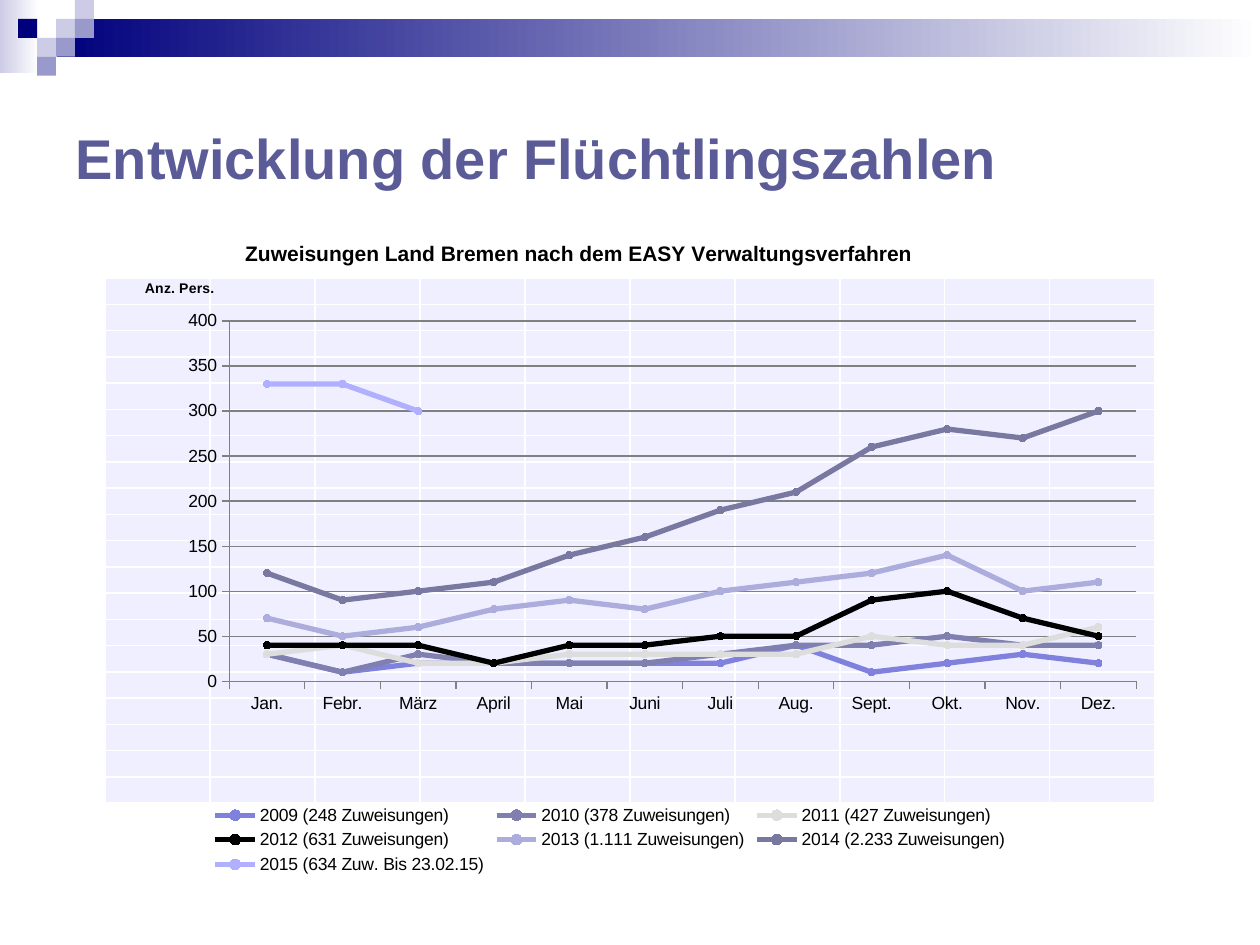
from lxml import etree
from pptx import Presentation
from pptx.chart.data import CategoryChartData
from pptx.dml.color import RGBColor
from pptx.enum import chart as ch, shapes, text
from pptx.oxml import ns, parse_xml
from pptx.util import Pt

NAVY = RGBColor(0x00, 0x00, 0x7D)
LAVENDER = RGBColor(0xCC, 0xCC, 0xE6)
PERIWINKLE = RGBColor(0x99, 0x99, 0xCC)
WHITE = RGBColor(0xFF, 0xFF, 0xFF)
BLACK = RGBColor(0x00, 0x00, 0x00)
TITLE_COLOR = RGBColor(0x5B, 0x5B, 0x98)
CELL_COLOR = RGBColor(0xEF, 0xEF, 0xFF)
AXIS_COLOR = RGBColor(0x80, 0x80, 0x80)

TITLE = "Entwicklung der Flüchtlingszahlen"
CHART_TITLE = "Zuweisungen Land Bremen nach dem EASY Verwaltungsverfahren"
AXIS_TITLE = "Anz. Pers."
MONTHS = ["Jan.", "Febr.", "März", "April", "Mai", "Juni",
          "Juli", "Aug.", "Sept.", "Okt.", "Nov.", "Dez."]
YEARS = [
    ("2009 (248 Zuweisungen)", RGBColor(0x80, 0x80, 0xDD),
     [30, 10, 20, 20, 20, 20, 20, 40, 10, 20, 30, 20]),
    ("2010 (378 Zuweisungen)", RGBColor(0x80, 0x80, 0xB0),
     [30, 10, 30, 20, 20, 20, 30, 40, 40, 50, 40, 40]),
    ("2011 (427 Zuweisungen)", RGBColor(0xDD, 0xDD, 0xDD),
     [30, 40, 20, 20, 30, 30, 30, 30, 50, 40, 40, 60]),
    ("2012 (631 Zuweisungen)", BLACK,
     [40, 40, 40, 20, 40, 40, 50, 50, 90, 100, 70, 50]),
    ("2013 (1.111 Zuweisungen)", RGBColor(0xAD, 0xAD, 0xDD),
     [70, 50, 60, 80, 90, 80, 100, 110, 120, 140, 100, 110]),
    ("2014 (2.233 Zuweisungen)", RGBColor(0x78, 0x78, 0xA0),
     [120, 90, 100, 110, 140, 160, 190, 210, 260, 280, 270, 300]),
    ("2015 (634 Zuw. Bis 23.02.15)", RGBColor(0xB0, 0xB0, 0xFF),
     [330, 330, 300] + [None] * 9),
]

# Header bands: left, top, width, height, start colour of the fade to white
BANDS = [(0, 0, 22.3, 41.8, LAVENDER), (32.4, 10.8, 687.6, 21.6, NAVY)]
# Mosaic squares: column, row, colour
SQUARE = 10.8
SQUARES = [(2, 1, LAVENDER), (3, 0, LAVENDER), (3, 1, PERIWINKLE),
           (1, 2, LAVENDER), (0, 1, NAVY), (2, 2, PERIWINKLE),
           (1, 3, PERIWINKLE)]
MOSAIC_LEFT = 10.4

ROWS, COLS = 20, 10
ROW_HEIGHT, COL_WIDTH = 15, 60


def add_text(frame, content, size, color, bold=False, align=None):
    paragraph = frame.paragraphs[0]
    if align is not None:
        paragraph.alignment = align
    run = paragraph.add_run()
    run.text = content
    run.font.name = "Arial"
    run.font.size = Pt(size)
    run.font.bold = bold
    run.font.color.rgb = color


def add_rect(slide, left, top, width, height, color, fade=False):
    rect = slide.shapes.add_shape(shapes.MSO_SHAPE.RECTANGLE, Pt(left),
                                  Pt(top), Pt(width), Pt(height))
    rect.shadow.inherit = False
    rect.line.fill.background()
    if fade:
        rect.fill.gradient()
        rect.fill.gradient_angle = 0
        for stop, stop_color in zip(rect.fill.gradient_stops, (color, WHITE)):
            stop.color.rgb = stop_color
    else:
        rect.fill.solid()
        rect.fill.fore_color.rgb = color


def style_cell(cell):
    """White 1 pt borders, pale fill and text small enough for the row."""
    cell.margin_left = cell.margin_right = 0
    cell.margin_top = cell.margin_bottom = 0
    properties = cell._tc.get_or_add_tcPr()
    for side in ("a:lnL", "a:lnR", "a:lnT", "a:lnB"):
        border = etree.SubElement(properties, ns.qn(side), w=str(Pt(1)))
        fill = etree.SubElement(border, ns.qn("a:solidFill"))
        etree.SubElement(fill, ns.qn("a:srgbClr"), val=str(WHITE))
    cell.fill.solid()
    cell.fill.fore_color.rgb = CELL_COLOR
    paragraph = cell.text_frame.paragraphs[0]
    etree.SubElement(paragraph._p, ns.qn("a:endParaRPr"), sz="800")


def place(part, index, x, y, w=None, h=None, inner=False):
    """Fix a chart part at fractions of the chart area."""
    for old in part.findall(ns.qn("c:layout")):
        part.remove(old)
    layout = etree.Element(ns.qn("c:layout"))
    manual = etree.SubElement(layout, ns.qn("c:manualLayout"))
    settings = [("layoutTarget", "inner" if inner else None),
                ("xMode", "edge"), ("yMode", "edge"),
                ("x", x), ("y", y), ("w", w), ("h", h)]
    for tag, value in settings:
        if value is not None:
            etree.SubElement(manual, ns.qn("c:" + tag), val=str(value))
    part.insert(index, layout)


def add_background_table(slide):
    frame = slide.shapes.add_table(ROWS, COLS, Pt(60), Pt(159),
                                   Pt(COLS * COL_WIDTH), Pt(ROWS * ROW_HEIGHT))
    table = frame.table
    table.first_row = table.horz_banding = False
    for row in table.rows:
        row.height = Pt(ROW_HEIGHT)
        for cell in row.cells:
            style_cell(cell)


def add_year_chart(slide):
    data = CategoryChartData()
    data.categories = MONTHS
    for name, _, values in YEARS:
        data.add_series(name, values)
    chart = slide.shapes.add_chart(ch.XL_CHART_TYPE.LINE_MARKERS, Pt(31),
                                   Pt(128), Pt(629), Pt(374.4), data).chart
    chart.font.name = "Arial"
    chart.font.size = Pt(10)
    chart.font.color.rgb = BLACK

    plot = chart.plots[0]
    plot.vary_by_categories = False
    for series, (_, color, _) in zip(plot.series, YEARS):
        series.smooth = False
        series.format.line.width = Pt(3)
        series.format.line.color.rgb = color
        series.marker.style = ch.XL_MARKER_STYLE.CIRCLE
        series.marker.size = 4
        series.marker.format.fill.solid()
        series.marker.format.fill.fore_color.rgb = color
        series.marker.format.line.color.rgb = color

    months, persons = chart.category_axis, chart.value_axis
    persons.minimum_scale, persons.maximum_scale = 0, 400
    persons.major_unit = 50
    persons.has_major_gridlines = True
    for line in (months.format.line, persons.format.line,
                 persons.major_gridlines.format.line):
        line.width = Pt(0.75)
        line.color.rgb = AXIS_COLOR
    for axis in (months, persons):
        axis.major_tick_mark = ch.XL_TICK_MARK.OUTSIDE

    chart.has_title = persons.has_title = True
    heading, axis_heading = chart.chart_title, persons.axis_title
    add_text(heading.text_frame, CHART_TITLE, 12, BLACK, bold=True)
    add_text(axis_heading.text_frame, AXIS_TITLE, 8, BLACK, bold=True)
    axis_heading.text_frame._txBody.find(ns.qn("a:bodyPr")).set("rot", "0")

    chart.has_legend = True
    chart.legend.position = ch.XL_LEGEND_POSITION.BOTTOM
    chart.legend.include_in_layout = False

    space = chart._chartSpace
    plot_area = space.find(".//" + ns.qn("c:plotArea"))
    place(plot_area, 0, 0.159, 0.148, 0.824, 0.55, inner=True)
    place(heading._element, 1, 0.17, 0.02)
    place(axis_heading._element, 1, 0.08, 0.08)
    place(chart.legend._element, 1, 0.14, 0.88, 0.73, 0.12)

    clear = parse_xml(f'<c:spPr {ns.nsdecls("c", "a")}><a:noFill/>'
                      '<a:ln><a:noFill/></a:ln></c:spPr>')
    space.find(ns.qn("c:txPr")).addprevious(clear)


def main():
    deck = Presentation()
    deck.slide_width, deck.slide_height = Pt(720), Pt(540)
    slide = deck.slides.add_slide(deck.slide_layouts[5])

    for *box, color in BANDS:
        add_rect(slide, *box, color, fade=True)
    for column, row, color in SQUARES:
        add_rect(slide, MOSAIC_LEFT + column * SQUARE, row * SQUARE,
                 SQUARE, SQUARE, color)

    title = slide.shapes.title
    title.left, title.top, title.width, title.height = map(
        Pt, (36, 36, 648, 108))
    title.text_frame.vertical_anchor = text.MSO_ANCHOR.MIDDLE
    add_text(title.text_frame, TITLE, 32, TITLE_COLOR, bold=True,
             align=text.PP_ALIGN.LEFT)

    add_background_table(slide)
    add_year_chart(slide)
    deck.save("out.pptx")


if __name__ == "__main__":
    main()
